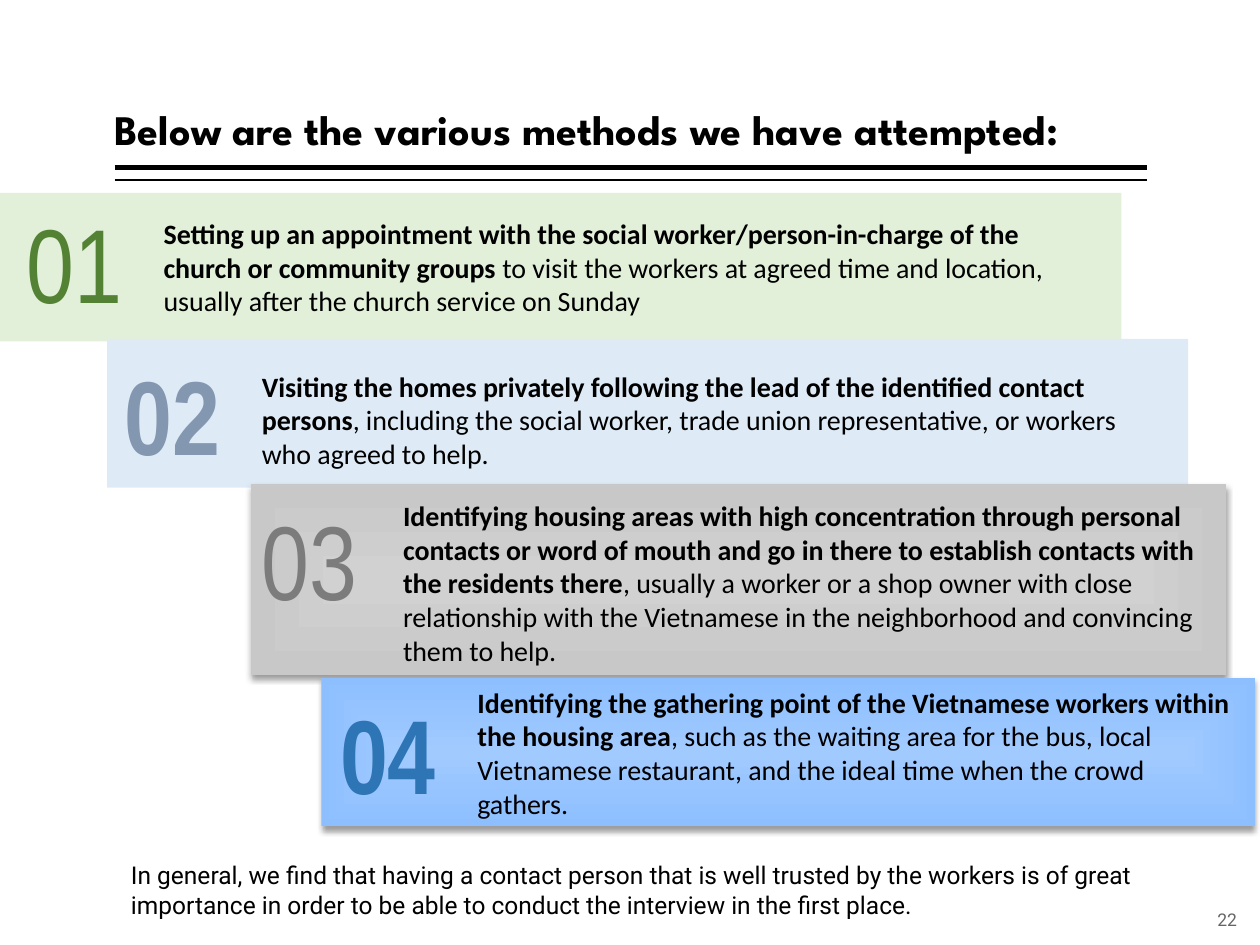
from lxml import etree
from pptx import Presentation
from pptx import util as u
from pptx.dml import color
from pptx.enum import shapes, text
from pptx.oxml import ns

Inches = u.Inches
COLORS = {
    "ink": "000000", "page": "666666",
    "green": "E2F0D9", "green number": "548235",
    "pale blue": "DEEBF7", "slate number": "8497B0",
    "gray": "C8C8C8", "gray center": "D1D1D1", "gray number": "7C7C7C",
    "blue": "8DBFFF", "blue center": "A1CAFF", "blue number": "2E75B6",
}


def rgb(name):
    return color.RGBColor.from_string(COLORS[name])


def add_text(box, runs, font, size, ink="ink", wrap=True, grow=True,
             side=0.1, anchor=text.MSO_ANCHOR.TOP):
    """Add a one-paragraph text box; runs are (words, bold) pairs."""
    frame = slide.shapes.add_textbox(*map(Inches, box)).text_frame
    frame.word_wrap = wrap
    frame.auto_size = (text.MSO_AUTO_SIZE.SHAPE_TO_FIT_TEXT if grow
                       else text.MSO_AUTO_SIZE.NONE)
    frame.margin_left = frame.margin_right = Inches(side)
    frame.vertical_anchor = anchor
    paragraph = frame.paragraphs[0]
    for words, bold in runs:
        run = paragraph.add_run()
        run.text = words
        run.font.name = font
        run.font.size = u.Pt(size)
        run.font.bold = bold
        run.font.color.rgb = rgb(ink)
    return paragraph


deck = Presentation()
deck.slide_width, deck.slide_height = Inches(10), Inches(7.5)
slide = deck.slides.add_slide(deck.slide_layouts[6])

# Double rule under the heading
for y, weight in ((1.33, 3), (1.43, 1)):
    rule = slide.shapes.add_connector(
        shapes.MSO_CONNECTOR.STRAIGHT,
        Inches(0.91), Inches(y), Inches(9.1), Inches(y))
    rule.line.color.rgb = rgb("ink")
    rule.line.width = u.Pt(weight)
    etree.SubElement(rule._element.spPr, ns.qn("a:effectLst"))

# Heading and page number
heading = add_text((0.91, 0.08, 8.07, 1.2),
                   [("Below are the various methods we have attempted:", True)],
                   "League Spartan", 24, grow=False, side=0,
                   anchor=text.MSO_ANCHOR.BOTTOM)
heading.line_spacing = 0.9
page = add_text((9.48, 7.1, 0.52, 0.4), [("22", False)], "Roboto", 10, "page",
                grow=False, side=0, anchor=text.MSO_ANCHOR.MIDDLE)
page.alignment = text.PP_ALIGN.CENTER

# Methods: band, fill, center of gradient, number box, number style, text box, text
methods = [
    ((0, 1.53, 8.9, 1.18), "green", None,
     (0.11, 1.53, 0.97, 1.11), "green number", False,
     (1.2, 1.67, 7.29, 0.91),
     "Setting up an appointment with the social worker/person-in-charge of "
     "the church or community groups ",
     "to visit the workers at agreed time and location, usually after the "
     "church service on Sunday"),
    ((0.85, 2.69, 8.58, 1.18), "pale blue", None,
     (0.89, 2.73, 1.42, 1.11), "slate number", True,
     (1.98, 2.88, 7.16, 0.91),
     "Visiting the homes privately following the lead of the identified "
     "contact persons",
     ", including the social worker, trade union representative, or workers "
     "who agreed to help."),
    ((1.99, 3.84, 7.74, 1.52), "gray", "gray center",
     (1.98, 3.88, 1.22, 1.11), "gray number", False,
     (3.1, 3.91, 6.49, 1.45),
     "Identifying housing areas with high concentration through personal "
     "contacts or word of mouth and go in there to establish contacts with "
     "the residents there",
     ", usually a worker or a shop owner with close relationship with the "
     "Vietnamese in the neighborhood and convincing them to help."),
    ((2.55, 5.38, 7.41, 1.18), "blue", "blue center",
     (2.6, 5.42, 1.42, 1.11), "blue number", True,
     (3.69, 5.39, 6.18, 1.18),
     "Identifying the gathering point of the Vietnamese workers within the "
     "housing area",
     ", such as the waiting area for the bus, local Vietnamese restaurant, "
     "and the ideal time when the crowd gathers."),
]

for index, (band_box, fill, center, number_box, number_ink, number_bold,
            words_box, lead, rest) in enumerate(methods, 1):
    band = slide.shapes.add_shape(shapes.MSO_SHAPE.RECTANGLE,
                                  *map(Inches, band_box))
    band.line.fill.background()
    band.shadow.inherit = False
    if center:
        # Gradient running from the center out to the edges
        band.fill.gradient()
        for stop, name in zip(band.fill.gradient_stops, (center, fill)):
            stop.color.rgb = rgb(name)
        properties = band._element.spPr
        gradient = properties.find(ns.qn("a:gradFill"))
        gradient.remove(gradient.find(ns.qn("a:lin")))
        outward = etree.SubElement(gradient, ns.qn("a:path"), path="rect")
        etree.SubElement(outward, ns.qn("a:fillToRect"),
                         l="50000", t="50000", r="50000", b="50000")
        # Soft shadow below the band
        shadow = etree.SubElement(
            properties.find(ns.qn("a:effectLst")), ns.qn("a:outerShdw"),
            blurRad=str(u.Pt(3.5)), dist=str(u.Pt(2)), dir="5400000",
            rotWithShape="0")
        shade = etree.SubElement(shadow, ns.qn("a:srgbClr"), val=COLORS["ink"])
        etree.SubElement(shade, ns.qn("a:alpha"), val="38000")
    else:
        band.fill.solid()
        band.fill.fore_color.rgb = rgb(fill)

    add_text(number_box, [(f"{index:02d}", number_bold)], "Arial Narrow", 60,
             number_ink, wrap=index > 1)
    add_text(words_box, [(lead, True), (rest, False)], "Calibri", 16)

# Closing remark
add_text((0.94, 6.78, 8.79, 0.57),
         [("In general, we find that having a contact person that is well "
           "trusted by the workers is of great importance in order to be able "
           "to conduct the interview in the first place.", False)],
         "Roboto", 14)

deck.save("out.pptx")
